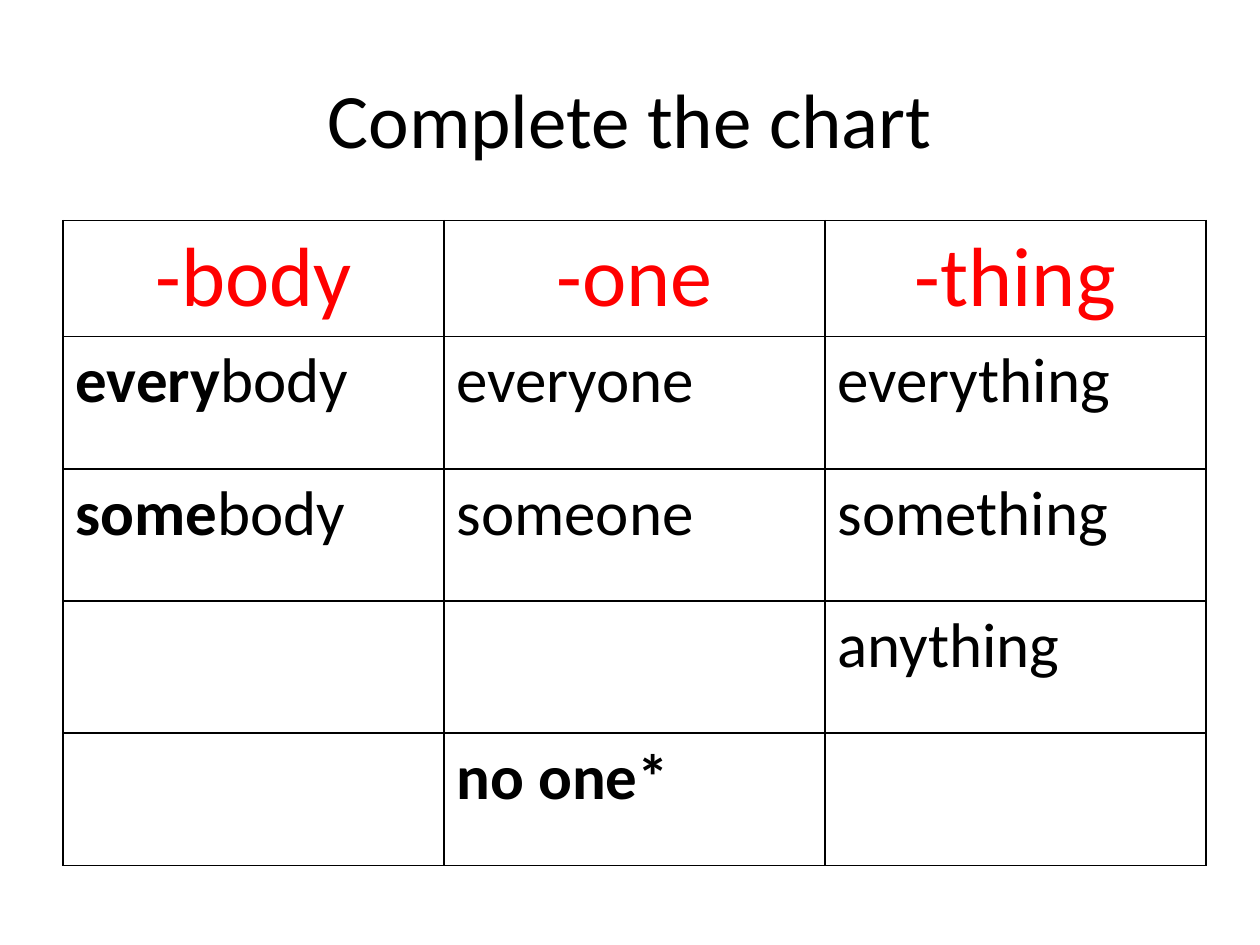
from dataclasses import dataclass

from lxml import etree
from pptx import Presentation
from pptx import util as u
from pptx.dml.color import RGBColor
from pptx.enum import text
from pptx.oxml import ns


@dataclass(frozen=True)
class Theme:
    font: str = "Calibri"
    ink: str = "000000"
    accent: str = "FF0000"
    paper: str = "FFFFFF"
    title_size: int = 44
    heading_size: int = 48
    word_size: int = 36
    border: int = 1


THEME = Theme()
WIDTH, HEIGHT = u.Inches(10), u.Inches(7.5)

HEADINGS = ["-body", "-one", "-thing"]
# Each cell is a bold part followed by a regular part.
WORDS = [
    [("every", "body"), ("", "everyone"), ("", "everything")],
    [("some", "body"), ("", "someone"), ("", "something")],
    [("", ""), ("", ""), ("", "anything")],
    [("", ""), ("no one*", ""), ("", "")],
]


def add_text(para, words, size, color=THEME.ink, bold=False, align=None):
    """Append one formatted span to a paragraph."""
    if align is not None:
        para.alignment = align
    span = para.add_run()
    span.text = words
    span.font.name = THEME.font
    span.font.size = u.Pt(size)
    span.font.bold = bold
    span.font.color.rgb = RGBColor.from_string(color)


def style_cell(cell):
    """Give a cell a plain fill and a thin line on every side."""
    cell.fill.solid()
    cell.fill.fore_color.rgb = RGBColor.from_string(THEME.paper)
    properties = cell._tc.get_or_add_tcPr()
    for index, side in enumerate(("a:lnL", "a:lnR", "a:lnT", "a:lnB")):
        line = etree.Element(ns.qn(side), w=str(u.Pt(THEME.border)))
        fill = etree.SubElement(line, ns.qn("a:solidFill"))
        etree.SubElement(fill, ns.qn("a:srgbClr"), val=THEME.ink)
        properties.insert(index, line)


def add_title(page, box, words):
    frame = page.shapes.add_textbox(*box).text_frame
    frame.word_wrap = True
    frame.vertical_anchor = text.MSO_ANCHOR.MIDDLE
    add_text(frame.paragraphs[0], words, THEME.title_size,
             align=text.PP_ALIGN.CENTER)


def add_word_table(page, box, heading_share=0.18):
    left, top, width, height = box
    rows, columns = len(WORDS) + 1, len(HEADINGS)
    table = page.shapes.add_table(rows, columns, *box).table
    table.first_row = table.horz_banding = False

    # Equal columns; a shorter heading row above equal word rows
    for column in table.columns:
        column.width = int(width / columns)
    heading_height = int(height * heading_share)
    for index, row in enumerate(table.rows):
        row.height = (int((height - heading_height) / len(WORDS))
                      if index else heading_height)
    for cell in table.iter_cells():
        style_cell(cell)

    # Headings
    for column, heading in enumerate(HEADINGS):
        add_text(table.cell(0, column).text_frame.paragraphs[0], heading,
                 THEME.heading_size, color=THEME.accent,
                 align=text.PP_ALIGN.CENTER)

    # Words
    for row, entries in enumerate(WORDS, start=1):
        for column, parts in enumerate(entries):
            para = table.cell(row, column).text_frame.paragraphs[0]
            for part, bold in zip(parts, (True, False)):
                if part:
                    add_text(para, part, THEME.word_size, bold=bold)


def share_box(left, top, width, height):
    """Turn shares of the slide's size into lengths."""
    return (int(WIDTH * left), int(HEIGHT * top),
            int(WIDTH * width), int(HEIGHT * height))


def main():
    deck = Presentation()
    deck.slide_width, deck.slide_height = WIDTH, HEIGHT
    page = deck.slides.add_slide(deck.slide_layouts[6])
    add_title(page, share_box(0.05, 0.04, 0.9, 0.17), "Complete the chart")
    add_word_table(page, (u.Inches(0.5), u.Inches(1.75),
                          u.Inches(9.07), u.Inches(5.12)))
    deck.save("out.pptx")


if __name__ == "__main__":
    main()
